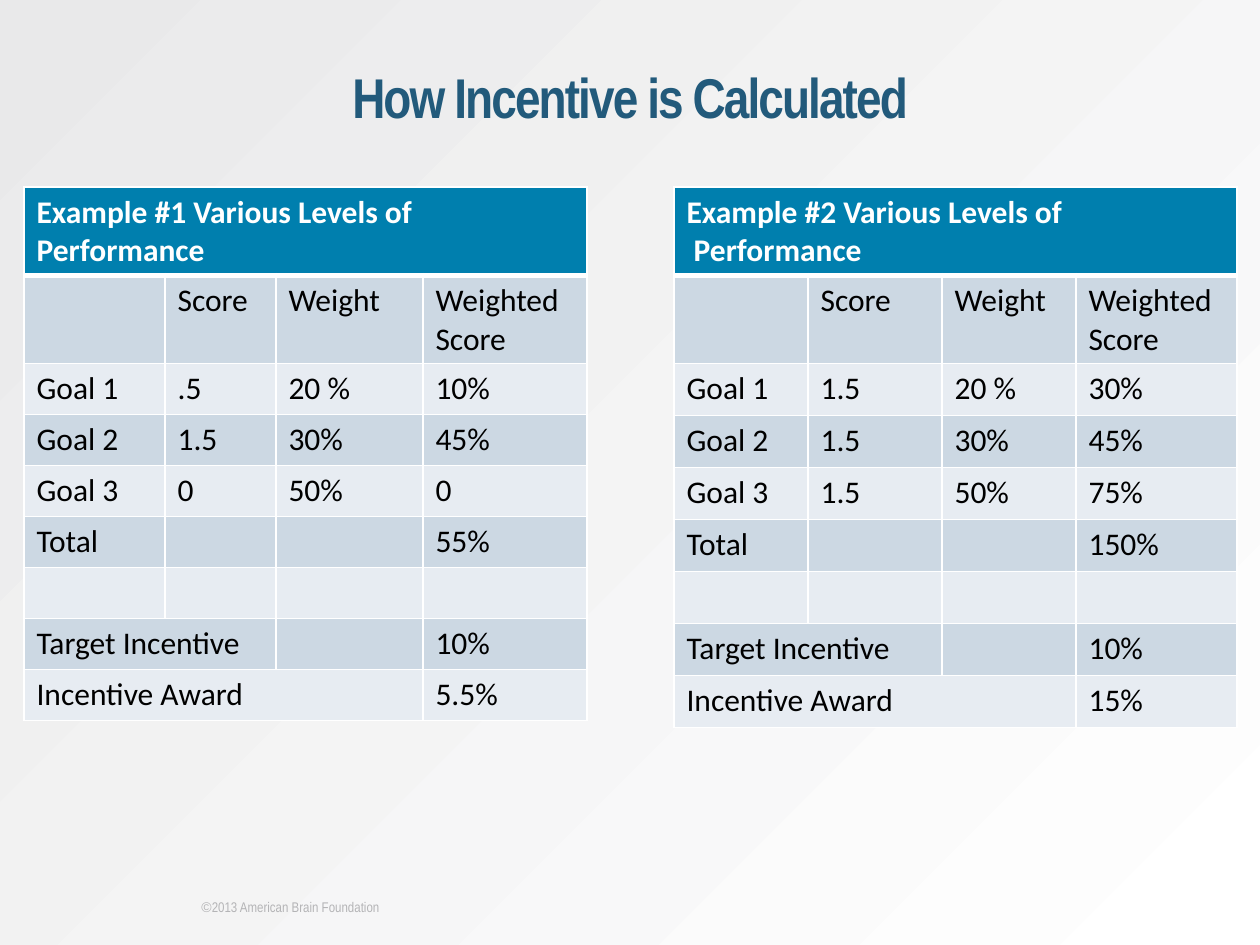
from dataclasses import dataclass

from lxml.etree import SubElement
from pptx import Presentation
from pptx.dml.color import RGBColor
from pptx.enum.text import MSO_ANCHOR, MSO_AUTO_SIZE, PP_ALIGN
from pptx.oxml import parse_xml
from pptx.oxml.ns import nsdecls, qn
from pptx.slide import Slide
from pptx.table import _Cell
from pptx.text.text import TextFrame, _Paragraph
from pptx.util import Emu, Pt

EMU_PER_PX = 914400 / 126
HEADER_FILL = "007FAE"
BAND_FILLS = ("CCD8E3", "E7ECF2")
WHITE = "FFFFFF"


@dataclass(frozen=True)
class IncentiveTable:
    left: int
    column_widths: tuple[int, ...]
    goal_row_height: int
    heading: str
    scores: tuple[str, ...]
    weighted_scores: tuple[str, ...]
    total: str
    award: str

    def rows(self) -> list[tuple[str, ...]]:
        weights = ("20 %", "30%", "50%")
        goals = [
            (f"Goal {number}", *values)
            for number, values in enumerate(zip(self.scores, weights, self.weighted_scores), 1)
        ]
        return [
            (self.heading, "", "", ""),
            ("", "Score", "Weight", "Weighted Score"),
            *goals,
            ("Total", "", "", self.total),
            ("", "", "", ""),
            ("Target Incentive", "", "", "10%"),
            ("Incentive Award", "", "", self.award),
        ]


TABLES = (
    IncentiveTable(24, (141, 111, 147, 164), 51,
                   "Example #1 Various Levels of Performance",
                   (".5", "1.5", "0"), ("10%", "45%", "0"), "55%", "5.5%"),
    IncentiveTable(674, (134, 134, 134, 161), 52,
                   "Example #2 Various Levels of\n Performance",
                   ("1.5", "1.5", "1.5"), ("30%", "45%", "75%"), "150%", "15%"),
)
TABLE_TOP = 187
TALL_ROW_HEIGHT = 88
# Row index: last column of the span that starts in the first column
SPANS = {0: 3, 7: 1, 8: 2}


def px(length: int) -> Emu:
    return Emu(round(length * EMU_PER_PX))


def color(value: str) -> RGBColor:
    return RGBColor.from_string(value)


def add_run(paragraph: _Paragraph, text: str, *, size: int, font: str, fill: str,
            bold: bool = False, spacing: int = 0) -> None:
    """Append formatted text; spacing is in hundredths of a point."""
    run = paragraph.add_run()
    run.text = text
    run.font.size = Pt(size)
    run.font.name = font
    run.font.bold = bold
    run.font.color.rgb = color(fill)
    if spacing:
        run.font._element.set("spc", str(spacing))


def write_lines(frame: TextFrame, text: str, **style) -> None:
    for index, line in enumerate(text.split("\n")):
        paragraph = frame.add_paragraph() if index else frame.paragraphs[0]
        add_run(paragraph, line, **style)


def set_background(slide: Slide) -> None:
    """Fade from white in the lower right corner to grey in the upper left."""
    fill = slide.background.fill
    fill.gradient()
    for stop, position, value in zip(fill.gradient_stops, (0, 1), (WHITE, "E9E9EA")):
        stop.position = position
        stop.color.rgb = color(value)
    gradient = next(slide._element.iter(qn("a:gradFill")))
    gradient.remove(gradient.find(qn("a:lin")))
    circle = SubElement(gradient, qn("a:path"), {"path": "circle"})
    SubElement(circle, qn("a:fillToRect"), {"l": "100000", "t": "100000"})


def set_borders(cell: _Cell, top_width: int, bottom_width: int) -> None:
    properties = cell._tc.get_or_add_tcPr()
    widths = {"lnL": 1, "lnR": 1, "lnT": top_width, "lnB": bottom_width}
    for index, (side, width) in enumerate(widths.items()):
        properties.insert(index, parse_xml(
            f'<a:{side} {nsdecls("a")} w="{Pt(width)}"><a:solidFill>'
            f'<a:srgbClr val="{WHITE}"/></a:solidFill></a:{side}>'))


def add_title(slide: Slide, text: str) -> None:
    title = slide.shapes.title
    title.left, title.top, title.width, title.height = px(0), px(64), px(1260), px(123)
    frame = title.text_frame
    frame.auto_size = MSO_AUTO_SIZE.NONE
    frame.vertical_anchor = MSO_ANCHOR.TOP
    paragraph = frame.paragraphs[0]
    paragraph.alignment = PP_ALIGN.CENTER
    paragraph.line_spacing = 0.9
    add_run(paragraph, text, size=32, font="Arial Narrow", fill="225A7B",
            bold=True, spacing=-110)


def add_copyright(slide: Slide) -> None:
    frame = slide.shapes.add_textbox(px(189), px(892), px(247), px(30)).text_frame
    frame.word_wrap = True
    paragraph = frame.paragraphs[0]
    add_run(paragraph, "©", size=8, font="Arial", fill="B4B4B6")
    add_run(paragraph, "2013 American Brain Foundation", size=8,
            font="Arial Narrow", fill="B4B4B6")


def add_incentive_table(slide: Slide, content: IncentiveTable) -> None:
    rows = content.rows()
    heights = [TALL_ROW_HEIGHT] * 2 + [content.goal_row_height] * (len(rows) - 2)
    table = slide.shapes.add_table(
        len(rows), len(content.column_widths), px(content.left), px(TABLE_TOP),
        px(sum(content.column_widths)), px(sum(heights))).table
    table.first_row = False
    table.horz_banding = False
    for column, width in zip(table.columns, content.column_widths):
        column.width = px(width)
    for row_index, (values, height) in enumerate(zip(rows, heights)):
        is_header = row_index == 0
        table.rows[row_index].height = px(height)
        for column_index, text in enumerate(values):
            cell = table.cell(row_index, column_index)
            cell.fill.solid()
            cell.fill.fore_color.rgb = color(
                HEADER_FILL if is_header else BAND_FILLS[(row_index - 1) % 2])
            set_borders(cell, 3 if row_index == 1 else 1, 3 if is_header else 1)
            if text:
                write_lines(cell.text_frame, text, size=18, font="Calibri",
                            fill=WHITE if is_header else "000000", bold=is_header)
    for row_index, last_column in SPANS.items():
        table.cell(row_index, 0).merge(table.cell(row_index, last_column))


def main() -> None:
    presentation = Presentation()
    presentation.slide_width, presentation.slide_height = px(1260), px(945)
    slide = presentation.slides.add_slide(presentation.slide_layouts[5])
    set_background(slide)
    add_copyright(slide)
    add_title(slide, "How Incentive is Calculated")
    for content in TABLES:
        add_incentive_table(slide, content)
    presentation.save("out.pptx")


if __name__ == "__main__":
    main()
